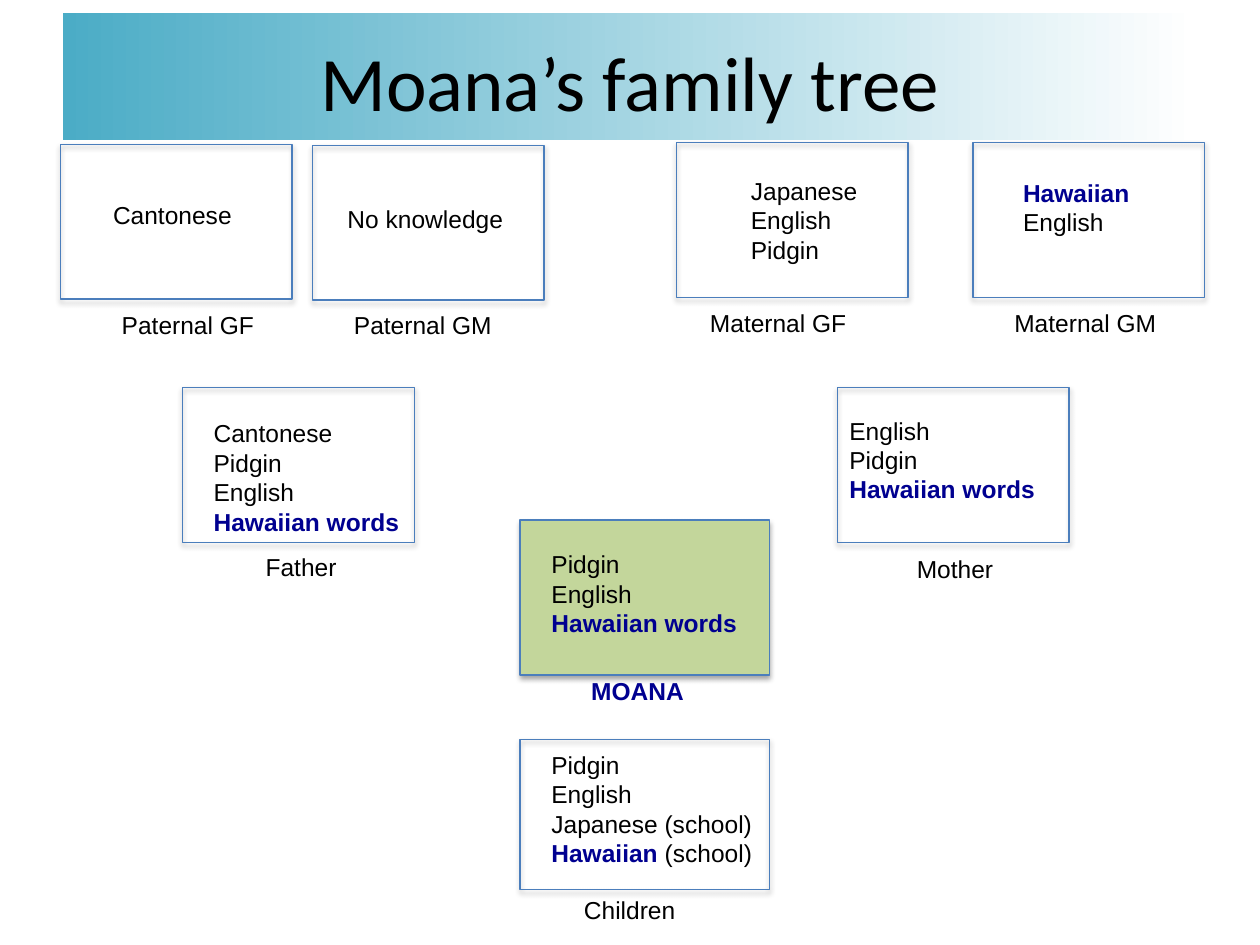
from dataclasses import dataclass

from lxml.etree import SubElement
from pptx import Presentation
from pptx.dml.color import RGBColor as RGB
from pptx.enum.shapes import MSO_SHAPE as Shape
from pptx.enum.text import MSO_ANCHOR as Anchor, MSO_AUTO_SIZE as AutoSize, PP_ALIGN as Align
from pptx.oxml.ns import qn
from pptx.util import Pt


@dataclass(frozen=True)
class Theme:
    title_font: str = "Calibri"
    body_font: str = "Arial"
    title_size: int = 44
    body_size: int = 14
    ink: RGB = RGB(0, 0, 0)
    accent: RGB = RGB(0x00, 0x00, 0x90)
    outline: RGB = RGB(0x4B, 0x7E, 0xBC)
    focus: RGB = RGB(0xC3, 0xD6, 0x9B)
    band_start: RGB = RGB(0x4B, 0xAC, 0xC6)
    band_end: RGB = RGB(0xFF, 0xFF, 0xFF)


THEME = Theme()

CARD = (132.5, 88.5)
CENTRE_CARD = (142.5, 88.5)
CHILD_CARD = (142.5, 85.5)
LINE_HEIGHT, PADDING = 16.8, 7.2

# Each card: left, top, size, fill
CARDS = [
    (34.5, 82.5, CARD, None),
    (178.5, 83, CARD, None),
    (386.5, 81.5, CARD, None),
    (556, 81.5, CARD, None),
    (104.5, 221.5, CARD, None),
    (478.5, 221.5, CARD, None),
    (297.2, 297.2, CENTRE_CARD, THEME.focus),
    (297.2, 422.7, CHILD_CARD, None),
]

# Each text: left, top, width, wrap, lines; *stars* mark the accented words
LANGUAGES = [
    (57.5, 111, 84, True, ["Cantonese"]),
    (191.5, 113, 119, True, ["No knowledge"]),
    (422, 97, 75.5, False, ["Japanese", "English", "Pidgin"]),
    (577.5, 98, 75.5, False, ["*Hawaiian*", "English"]),
    (115, 235.5, 121.5, False, ["Cantonese", "Pidgin", "English", "*Hawaiian words*"]),
    (478.3, 234, 132.5, True, ["English", "Pidgin", "*Hawaiian words*"]),
    (308, 310.3, 121, True, ["Pidgin", "English", "*Hawaiian words*"]),
    (308, 425, 132.5, True,
     ["Pidgin", "English", "Japanese (school)", "*Hawaiian *(school)"]),
]
LABELS = [
    (62.5, 173.5, 174, True, ["Paternal GF"]),
    (195.2, 173.5, 191, True, ["Paternal GM"]),
    (398.6, 172.3, 174, True, ["Maternal GF"]),
    (572.5, 172.3, 134, True, ["Maternal GM"]),
    (144.7, 311.8, 56, False, ["Father"]),
    (516.8, 313, 59, False, ["Mother"]),
    (330.7, 382.5, 67.5, False, ["*MOANA*"]),
    (326.6, 507.7, 67, False, ["Children"]),
]


def add_shadow(shape):
    effects = SubElement(shape.element.spPr, qn("a:effectLst"))
    shadow = SubElement(effects, qn("a:outerShdw"), blurRad=str(Pt(3.1)),
                        dist=str(Pt(1.8)), dir="5400000", rotWithShape="0")
    color = SubElement(shadow, qn("a:srgbClr"), val="000000")
    SubElement(color, qn("a:alpha"), val="35000")


def add_card(page, left, top, size, fill):
    card = page.shapes.add_shape(Shape.RECTANGLE, Pt(left), Pt(top), *map(Pt, size))
    if fill is None:
        card.fill.background()
    else:
        card.fill.solid()
        card.fill.fore_color.rgb = fill
    card.line.color.rgb = THEME.outline
    card.line.width = Pt(0.75)
    add_shadow(card)


def add_text(page, left, top, width, wrap, lines):
    height = LINE_HEIGHT * len(lines) + PADDING
    box = page.shapes.add_textbox(Pt(left), Pt(top), Pt(width), Pt(height))
    frame = box.text_frame
    frame.word_wrap = wrap
    frame.auto_size = AutoSize.SHAPE_TO_FIT_TEXT
    for index, line in enumerate(lines):
        para = frame.add_paragraph() if index else frame.paragraphs[0]
        para.font.name = THEME.body_font
        para.font.size = Pt(THEME.body_size)
        # Every second piece lies between stars
        for piece, words in enumerate(line.split("*")):
            if words:
                span = para.add_run()
                span.text = words
                accented = piece % 2 == 1
                span.font.bold = accented
                span.font.color.rgb = THEME.accent if accented else THEME.ink


def add_title_band(page, title):
    band = page.shapes.add_shape(Shape.RECTANGLE, Pt(36), Pt(7.2), Pt(648), Pt(72.7))
    band.shadow.inherit = False
    band.line.fill.background()
    band.fill.gradient()
    band.fill.gradient_angle = 0
    for stop, color in zip(band.fill.gradient_stops, (THEME.band_start, THEME.band_end)):
        stop.color.rgb = color
    frame = band.text_frame
    frame.word_wrap = True
    frame.vertical_anchor = Anchor.BOTTOM
    frame.margin_left = frame.margin_right = Pt(7.2)
    frame.margin_top = frame.margin_bottom = Pt(7.2)
    para = frame.paragraphs[0]
    para.text = title
    para.alignment = Align.CENTER
    para.font.name = THEME.title_font
    para.font.size = Pt(THEME.title_size)
    para.font.color.rgb = THEME.ink


def main():
    deck = Presentation()
    deck.slide_width, deck.slide_height = Pt(720), Pt(540)
    page = deck.slides.add_slide(deck.slide_layouts[6])

    # Family members
    for card in CARDS:
        add_card(page, *card)

    # Languages spoken, then family roles
    for text in LANGUAGES + LABELS:
        add_text(page, *text)

    # Heading
    add_title_band(page, "Moana’s family tree")
    deck.save("out.pptx")


if __name__ == "__main__":
    main()
